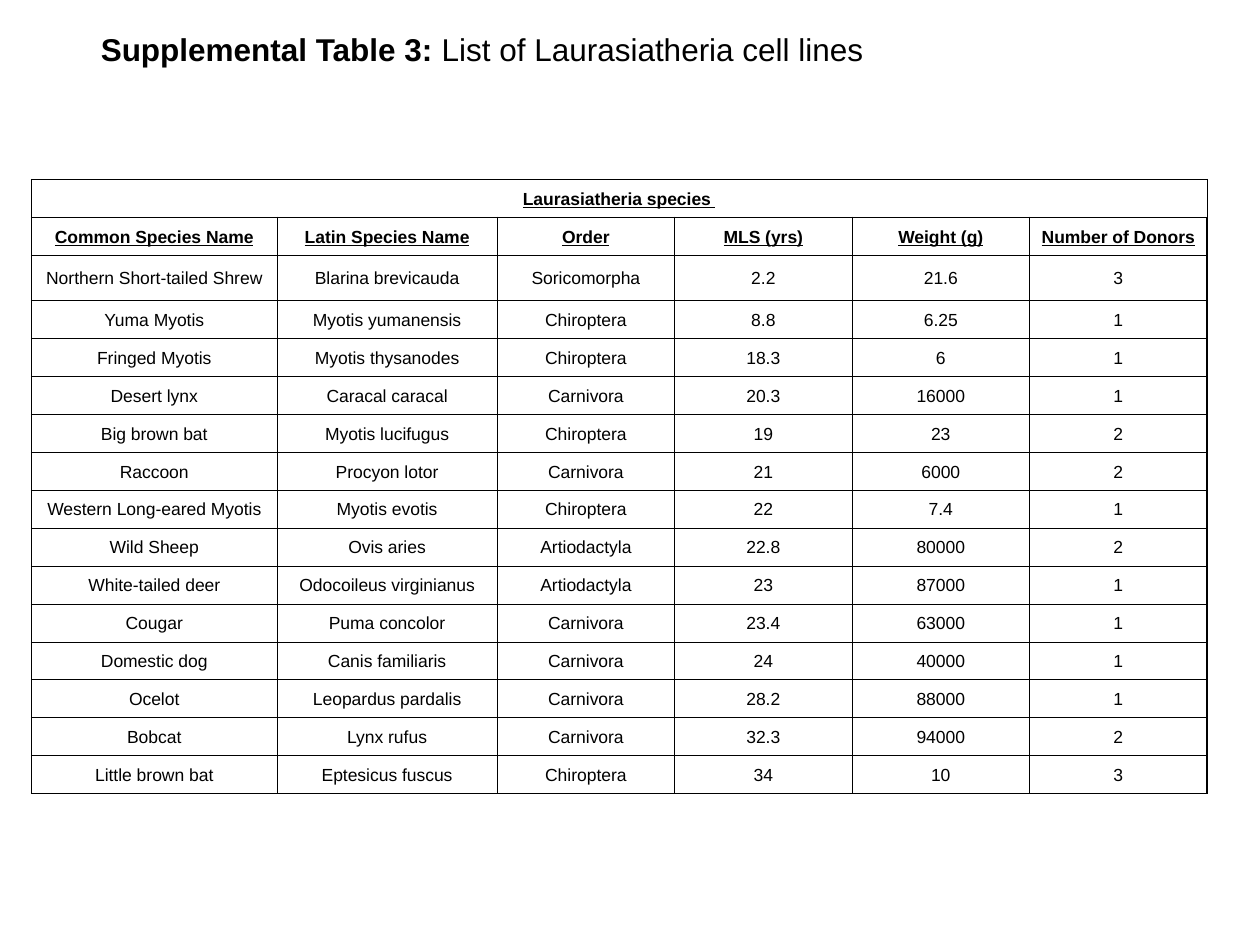
import pptx
import pptx.dml.color
import pptx.enum.text
import pptx.oxml
import pptx.oxml.ns
import pptx.util

SLIDE_WIDTH = pptx.util.Inches(10)
SLIDE_HEIGHT = pptx.util.Inches(7.5)
FONT = "Arial"
BLACK = "000000"
HEADING_ROWS = 2
COLUMN_SHARES = [1.95, 1.75, 1.41, 1.41, 1.41, 1.41]
CAPTION = "Laurasiatheria species "
HEADINGS = ["Common Species Name", "Latin Species Name", "Order",
            "MLS (yrs)", "Weight (g)", "Number of Donors"]
SPECIES = [
    ("Northern Short-tailed Shrew", "Blarina brevicauda", "Soricomorpha", "2.2", "21.6", "3"),
    ("Yuma Myotis", "Myotis yumanensis", "Chiroptera", "8.8", "6.25", "1"),
    ("Fringed Myotis", "Myotis thysanodes", "Chiroptera", "18.3", "6", "1"),
    ("Desert lynx", "Caracal caracal", "Carnivora", "20.3", "16000", "1"),
    ("Big brown bat", "Myotis lucifugus", "Chiroptera", "19", "23", "2"),
    ("Raccoon", "Procyon lotor", "Carnivora", "21", "6000", "2"),
    ("Western Long-eared Myotis", "Myotis evotis", "Chiroptera", "22", "7.4", "1"),
    ("Wild Sheep", "Ovis aries", "Artiodactyla", "22.8", "80000", "2"),
    ("White-tailed deer", "Odocoileus virginianus", "Artiodactyla", "23", "87000", "1"),
    ("Cougar", "Puma concolor", "Carnivora", "23.4", "63000", "1"),
    ("Domestic dog", "Canis familiaris", "Carnivora", "24", "40000", "1"),
    ("Ocelot", "Leopardus pardalis", "Carnivora", "28.2", "88000", "1"),
    ("Bobcat", "Lynx rufus", "Carnivora", "32.3", "94000", "2"),
    ("Little brown bat", "Eptesicus fuscus", "Chiroptera", "34", "10", "3"),
]


def box(left, top, width, height):
    return (round(left * SLIDE_WIDTH), round(top * SLIDE_HEIGHT),
            round(width * SLIDE_WIDTH), round(height * SLIDE_HEIGHT))


def color(hex_code):
    return pptx.dml.color.RGBColor.from_string(hex_code)


def set_font(font, size):
    font.name = FONT
    font.size = pptx.util.Pt(size)
    font.color.rgb = color(BLACK)


def add_title(slide, area):
    title = slide.shapes.title
    title.left, title.top, title.width, title.height = area
    frame = title.text_frame
    frame.word_wrap = False
    frame.auto_size = pptx.enum.text.MSO_AUTO_SIZE.SHAPE_TO_FIT_TEXT
    frame.vertical_anchor = pptx.enum.text.MSO_ANCHOR.TOP
    heading = frame.paragraphs[0]
    heading.alignment = pptx.enum.text.PP_ALIGN.LEFT
    set_font(heading.font, 18)
    for words, bold in [("Supplemental Table 3: ", True),
                        ("List of Laurasiatheria cell lines", False)]:
        part = heading.add_run()
        part.text = words
        part.font.bold = bold


def set_borders(cell, widths):
    properties = cell._tc.get_or_add_tcPr()
    for side, width in zip("LRTB", widths):
        properties.append(pptx.oxml.parse_xml(
            f'<a:ln{side} {pptx.oxml.ns.nsdecls("a")} w="{pptx.util.Pt(width)}">'
            f'<a:solidFill><a:srgbClr val="{BLACK}"/></a:solidFill></a:ln{side}>'))


def format_cell(cell, words, is_heading):
    cell.fill.background()
    cell.vertical_anchor = pptx.enum.text.MSO_ANCHOR.MIDDLE
    cell.margin_left = cell.margin_right = cell.margin_top = pptx.util.Inches(0.01)
    cell.margin_bottom = 0
    entry = cell.text_frame.paragraphs[0]
    entry.text = words
    entry.alignment = pptx.enum.text.PP_ALIGN.CENTER
    set_font(entry.font, 10)
    entry.font.bold = entry.font.underline = is_heading


def add_species_table(slide, area):
    left, top, width, height = area
    entries = [[CAPTION] + [""] * (len(HEADINGS) - 1), HEADINGS, *SPECIES]
    row_shares = [1.2 if row == HEADING_ROWS else 1 for row in range(len(entries))]
    table = slide.shapes.add_table(len(entries), len(HEADINGS), *area).table
    table.first_row = table.horz_banding = False
    for column, share in zip(table.columns, COLUMN_SHARES):
        column.width = round(width * share / sum(COLUMN_SHARES))
    for row, share in zip(table.rows, row_shares):
        row.height = round(height * share / sum(row_shares))

    last_row, last_column = len(entries) - 1, len(HEADINGS) - 1
    for r, row_entries in enumerate(entries):
        for c, words in enumerate(row_entries):
            cell = table.cell(r, c)
            heavy_sides = (c == 0, c == last_column, r <= HEADING_ROWS,
                           r < HEADING_ROWS or r == last_row)
            set_borders(cell, [1 if heavy else 0.5 for heavy in heavy_sides])
            format_cell(cell, words, r < HEADING_ROWS)
    table.cell(0, 0).merge(table.cell(0, last_column))


def main():
    deck = pptx.Presentation()
    deck.slide_width, deck.slide_height = SLIDE_WIDTH, SLIDE_HEIGHT
    slide = deck.slides.add_slide(deck.slide_layouts[5])
    add_title(slide, box(0.07, 0.025, 0.63, 0.054))
    add_species_table(slide, box(0.025, 0.19, 0.933, 0.65))
    deck.save("out.pptx")


if __name__ == "__main__":
    main()
